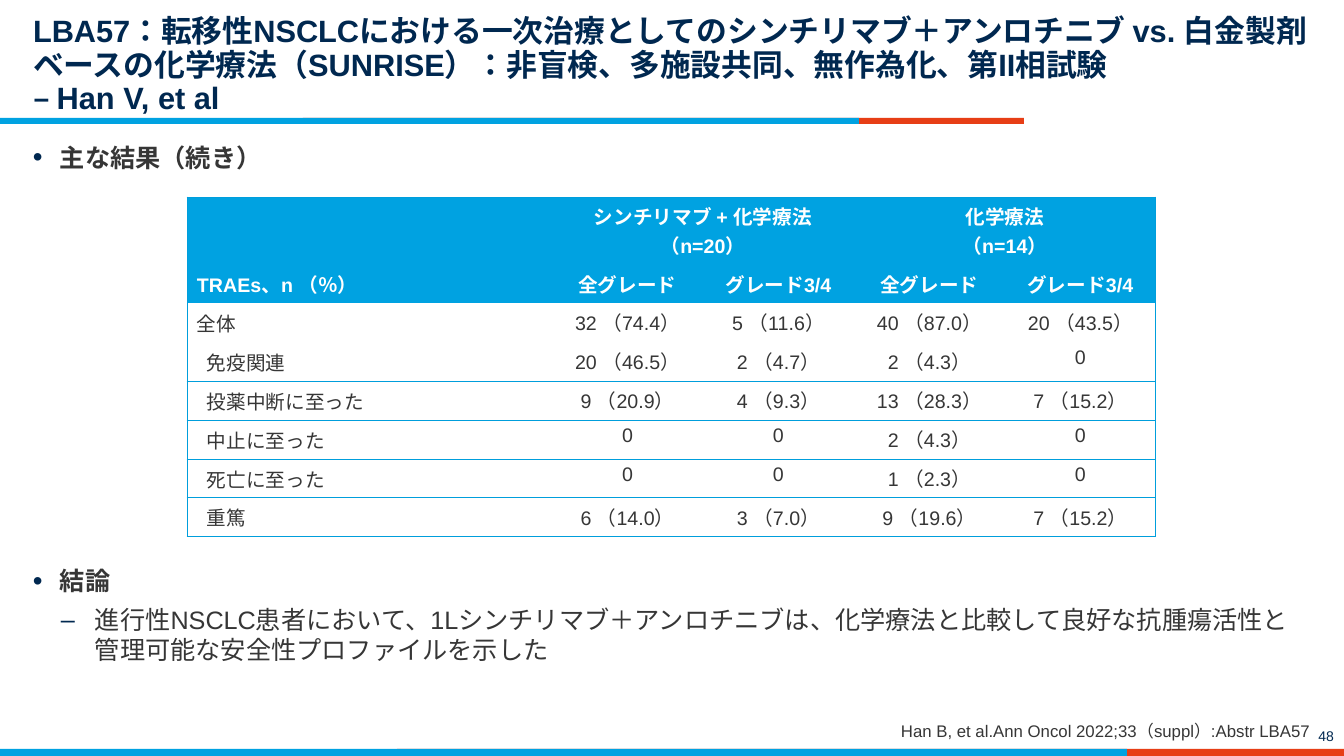
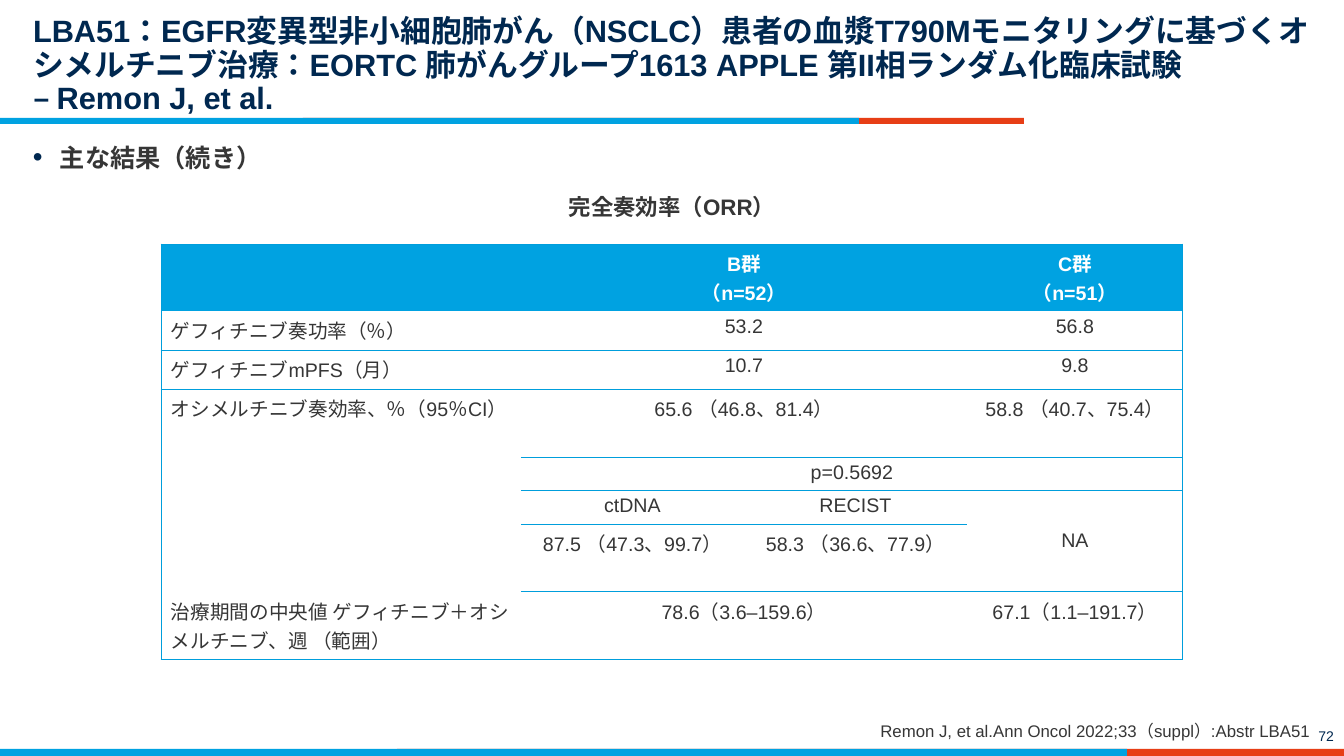
from dataclasses import dataclass

from lxml import etree
from pptx import Presentation
from pptx.dml.color import RGBColor
from pptx.enum.lang import MSO_LANGUAGE_ID
from pptx.enum.shapes import MSO_SHAPE
from pptx.enum.text import MSO_ANCHOR, MSO_AUTO_SIZE, PP_ALIGN
from pptx.oxml.ns import qn
from pptx.util import Emu, Pt

EMU_PER_PX = 914400 / 100.8
RECTANGLE = MSO_SHAPE.RECTANGLE
JAPANESE = MSO_LANGUAGE_ID.JAPANESE
NO_AUTOFIT = MSO_AUTO_SIZE.NONE
TOP, MIDDLE, BOTTOM = MSO_ANCHOR.TOP, MSO_ANCHOR.MIDDLE, MSO_ANCHOR.BOTTOM
LEFT, CENTER, RIGHT = PP_ALIGN.LEFT, PP_ALIGN.CENTER, PP_ALIGN.RIGHT

NAVY = RGBColor(0x00, 0x28, 0x50)
GRAY = RGBColor(0x36, 0x36, 0x36)
WHITE = RGBColor(0xFF, 0xFF, 0xFF)
BLUE = RGBColor(0x00, 0xA2, 0xE1)
RED = RGBColor(0xE7, 0x3E, 0x16)
RULE_BLUE = RGBColor(0x00, 0x9E, 0xDC)

FONT = "Arial"
TITLE_ONLY = 5
PLAIN_TABLE_STYLE = "{2D5ABB26-0587-4C30-8999-92F81FD0307C}"
RULE_WIDTH = Pt(0.75)


@dataclass(frozen=True)
class Band:
    left: int
    top: int
    width: int
    height: int
    color: RGBColor


@dataclass(frozen=True)
class Bullet:
    text: str
    level: int = 0
    bold: bool = True
    before: int = 0


@dataclass(frozen=True)
class Entry:
    row: int
    column: int
    text: str
    row_span: int = 1
    column_span: int = 1
    header: bool = False
    align: PP_ALIGN = CENTER
    anchor: MSO_ANCHOR = TOP
    inset: int = 10
    rule: bool = True


@dataclass(frozen=True)
class Grid:
    left: int
    top: int
    columns: list[int]
    rows: list[int]
    entries: list[Entry]


@dataclass(frozen=True)
class Content:
    title: str
    bullets: list[Bullet]
    source: str
    number: str
    grid: Grid
    caption: str = ""


BANDS = [
    Band(397, 749, 947, 7, RED),
    Band(0, 749, 1127, 7, BLUE),
    Band(303, 118, 721, 6, RED),
    Band(0, 118, 859, 6, BLUE),
]


def px(count: int) -> Emu:
    return Emu(round(count * EMU_PER_PX))


def write(para, text: str, *, size: int, color: RGBColor, bold: bool = False,
          align: PP_ALIGN = LEFT, before: int = 0, after: int = 0,
          spacing: float = 1.0) -> None:
    para.alignment = align
    para.line_spacing = spacing
    para.space_before, para.space_after = Pt(before), Pt(after)
    for index, line in enumerate(text.split("\v")):
        if index:
            para.add_line_break()
        span = para.add_run()
        span.text = line
        span.font.name = FONT
        span.font.size = Pt(size)
        span.font.bold = bold
        span.font.color.rgb = color
        span.font.language_id = JAPANESE


def set_frame(box, *, anchor: MSO_ANCHOR = TOP,
              insets: tuple[int, int, int, int] = (0, 0, 0, 0)):
    frame = box.text_frame
    frame.word_wrap = True
    frame.auto_size = NO_AUTOFIT
    frame.vertical_anchor = anchor
    (frame.margin_left, frame.margin_top,
     frame.margin_right, frame.margin_bottom) = map(px, insets)
    return frame


def add_text(page, text: str, area: tuple[int, int, int, int], *,
             anchor: MSO_ANCHOR = TOP,
             insets: tuple[int, int, int, int] = (0, 0, 0, 0), **style) -> None:
    box = page.shapes.add_textbox(*map(px, area))
    frame = set_frame(box, anchor=anchor, insets=insets)
    write(frame.paragraphs[0], text, **style)


def add_band(page, band: Band) -> None:
    shape = page.shapes.add_shape(
        RECTANGLE, px(band.left), px(band.top), px(band.width), px(band.height))
    shape.shadow.inherit = False
    shape.fill.solid()
    shape.fill.fore_color.rgb = band.color
    shape.line.fill.background()


def set_title(page, text: str) -> None:
    title = page.shapes.title
    title.left, title.top, title.width, title.height = map(px, (33, 12, 1277, 104))
    frame = set_frame(title, anchor=BOTTOM, insets=(0, 5, 0, 0))
    write(frame.paragraphs[0], text, size=22, color=NAVY, bold=True, spacing=0.9)


def mark_bullet(para, level: int) -> None:
    margin, hanging, symbol, percent = [(27, 27, "•", 110), (62, 34, "–", 100)][level]
    para.level = level
    properties = para._p.get_or_add_pPr()
    properties.set("marL", str(px(margin)))
    properties.set("indent", str(px(-hanging)))
    color = etree.SubElement(properties, qn("a:buClr"))
    etree.SubElement(color, qn("a:srgbClr"), val=str(NAVY))
    etree.SubElement(properties, qn("a:buSzPct"), val=str(percent * 1000))
    etree.SubElement(properties, qn("a:buFont"), typeface=FONT)
    etree.SubElement(properties, qn("a:buChar"), char=symbol)


def add_bullets(page, bullets: list[Bullet]) -> None:
    box = page.shapes.add_textbox(*map(px, (33, 137, 1277, 557)))
    frame = set_frame(box, insets=(0, 5, 0, 5))
    for index, bullet in enumerate(bullets):
        para = frame.add_paragraph() if index else frame.paragraphs[0]
        write(para, bullet.text, size=18, color=GRAY, bold=bullet.bold,
              before=bullet.before, after=6)
        mark_bullet(para, bullet.level)


def draw_edges(cell, edges: str) -> None:
    properties = cell._tc.get_or_add_tcPr()
    for edge in edges:
        line = etree.SubElement(properties, qn(f"a:ln{edge}"), w=str(RULE_WIDTH))
        fill = etree.SubElement(line, qn("a:solidFill"))
        etree.SubElement(fill, qn("a:srgbClr"), val=str(RULE_BLUE))


def fill_cell(table, entry: Entry, grid: Grid) -> None:
    cell = table.cell(entry.row, entry.column)
    end_row = entry.row + entry.row_span
    end_column = entry.column + entry.column_span
    if entry.row_span * entry.column_span > 1:
        cell.merge(table.cell(end_row - 1, end_column - 1))
    cell.vertical_anchor = entry.anchor
    cell.margin_left, cell.margin_right = px(entry.inset), px(10)
    cell.margin_top = cell.margin_bottom = px(5)
    sides = {
        "L": entry.column == 0,
        "R": end_column == len(grid.columns),
        "T": entry.row == 0,
        "B": entry.rule and not entry.header,
    }
    draw_edges(cell, "".join(side for side, shown in sides.items() if shown))
    if entry.header:
        cell.fill.solid()
        cell.fill.fore_color.rgb = BLUE
    else:
        cell.fill.background()
    if not entry.text:
        return
    for index, line in enumerate(entry.text.split("\n")):
        frame = cell.text_frame
        para = frame.add_paragraph() if index else frame.paragraphs[0]
        write(para, line, size=14, color=WHITE if entry.header else GRAY,
              bold=entry.header, align=entry.align)


def add_grid(page, grid: Grid) -> None:
    table = page.shapes.add_table(
        len(grid.rows), len(grid.columns), px(grid.left), px(grid.top),
        px(sum(grid.columns)), px(sum(grid.rows))).table
    table.first_row = table.horz_banding = False
    table._tbl.tblPr.find(qn("a:tableStyleId")).text = PLAIN_TABLE_STYLE
    for column, width in zip(table.columns, grid.columns):
        column.width = px(width)
    for row, height in zip(table.rows, grid.rows):
        row.height = px(height)
    for entry in grid.entries:
        fill_cell(table, entry, grid)


def event_entries() -> list[Entry]:
    entries = [
        Entry(0, 0, "TRAEs、n （％）", row_span=2, header=True, align=LEFT, anchor=BOTTOM),
        Entry(0, 1, "シンチリマブ + 化学療法\n（n=20）", column_span=2, header=True, anchor=MIDDLE),
        Entry(0, 3, "化学療法\n（n=14）", column_span=2, header=True, anchor=MIDDLE),
    ]
    grades = ["全グレード", "グレード3/4"] * 2
    entries += [Entry(1, column, grade, header=True, anchor=MIDDLE)
                for column, grade in enumerate(grades, 1)]
    events = [
        ("全体", "32 （74.4）", "5 （11.6）", "40 （87.0）", "20 （43.5）"),
        ("免疫関連", "20 （46.5）", "2 （4.7）", "2 （4.3）", "0"),
        ("投薬中断に至った", "9 （20.9）", "4 （9.3）", "13 （28.3）", "7 （15.2）"),
        ("中止に至った", "0", "0", "2 （4.3）", "0"),
        ("死亡に至った", "0", "0", "1 （2.3）", "0"),
        ("重篤", "6 （14.0）", "3 （7.0）", "9 （19.6）", "7 （15.2）"),
    ]
    for row, (label, *counts) in enumerate(events, 2):
        overall = row == 2
        entries.append(Entry(row, 0, label, align=LEFT, anchor=MIDDLE,
                             inset=10 if overall else 20, rule=not overall))
        entries += [Entry(row, column, count, rule=not overall)
                    for column, count in enumerate(counts, 1)]
    return entries


def response_entries() -> list[Entry]:
    entries = [
        Entry(0, 0, "", header=True),
        Entry(0, 1, "B群\n（n=52）", column_span=2, header=True, anchor=MIDDLE),
        Entry(0, 3, "C群\n（n=51）", header=True, anchor=MIDDLE),
        Entry(4, 1, "p=0.5692", column_span=3),
        Entry(5, 1, "ctDNA"),
        Entry(5, 2, "RECIST"),
        Entry(5, 3, "NA", row_span=2, anchor=MIDDLE),
        Entry(6, 1, "87.5 （47.3、99.7）"),
        Entry(6, 2, "58.3 （36.6、77.9）"),
    ]
    measures = [
        (1, 1, "ゲフィチニブ奏功率（％）", "53.2", "56.8"),
        (2, 1, "ゲフィチニブmPFS（月）", "10.7", "9.8"),
        (3, 4, "オシメルチニブ奏効率、％（95％CI）", "65.6 （46.8、81.4）", "58.8 （40.7、75.4）"),
        (7, 1, "治療期間の中央値 ゲフィチニブ＋オシメルチニブ、週 （範囲）",
         "78.6（3.6–159.6）", "67.1（1.1–191.7）"),
    ]
    for row, span, label, group_b, group_c in measures:
        entries += [
            Entry(row, 0, label, row_span=span, align=LEFT, rule=span == 1),
            Entry(row, 1, group_b, column_span=2),
            Entry(row, 3, group_c),
        ]
    return entries


CONTENTS = [
    Content(
        "LBA57：転移性NSCLCにおける一次治療としてのシンチリマブ＋アンロチニブ vs. 白金製剤ベースの化学療法（SUNRISE）：非盲検、多施設共同、無作為化、第II相試験\v– Han V, et al",
        [Bullet("主な結果（続き）"),
         Bullet("結論", before=275),
         Bullet("進行性NSCLC患者において、1Lシンチリマブ＋アンロチニブは、化学療法と比較して良好な抗腫瘍活性と管理可能な安全性プロファイルを示した",
                level=1, bold=False)],
        "Han B, et al.Ann Oncol 2022;33（suppl）:Abstr LBA57", "48",
        Grid(187, 197, [365] + [151] * 4, [67] + [39] * 7, event_entries())),
    Content(
        "LBA51：EGFR変異型非小細胞肺がん（NSCLC）患者の血漿T790Mモニタリングに基づくオシメルチニブ治療：EORTC 肺がんグループ1613 APPLE 第II相ランダム化臨床試験\v– Remon J, et al.",
        [Bullet("主な結果（続き）")],
        "Remon J, et al.Ann Oncol 2022;33（suppl）:Abstr LBA51", "72",
        Grid(161, 244, [360, 223, 223, 216], [67, 39, 39, 68, 33, 34, 68, 67],
             response_entries()),
        caption="完全奏効率（ORR）"),
]


def add_page(deck, content: Content) -> None:
    page = deck.slides.add_slide(deck.slide_layouts[TITLE_ONLY])
    for band in BANDS:
        add_band(page, band)
    add_text(page, content.number, (1278, 709, 66, 40), anchor=BOTTOM,
             insets=(10, 5, 10, 5), size=10, color=NAVY, align=RIGHT)
    set_title(page, content.title)
    add_bullets(page, content.bullets)
    add_text(page, content.source, (704, 719, 606, 22), anchor=BOTTOM,
             size=12, color=GRAY, align=RIGHT, before=6)
    if content.caption:
        add_text(page, content.caption, (371, 193, 602, 30),
                 size=16, color=GRAY, bold=True, align=CENTER)
    add_grid(page, content.grid)


def main() -> None:
    deck = Presentation()
    deck.slide_width, deck.slide_height = px(1344), px(756)
    for content in CONTENTS:
        add_page(deck, content)
    deck.save("out.pptx")


if __name__ == "__main__":
    main()
